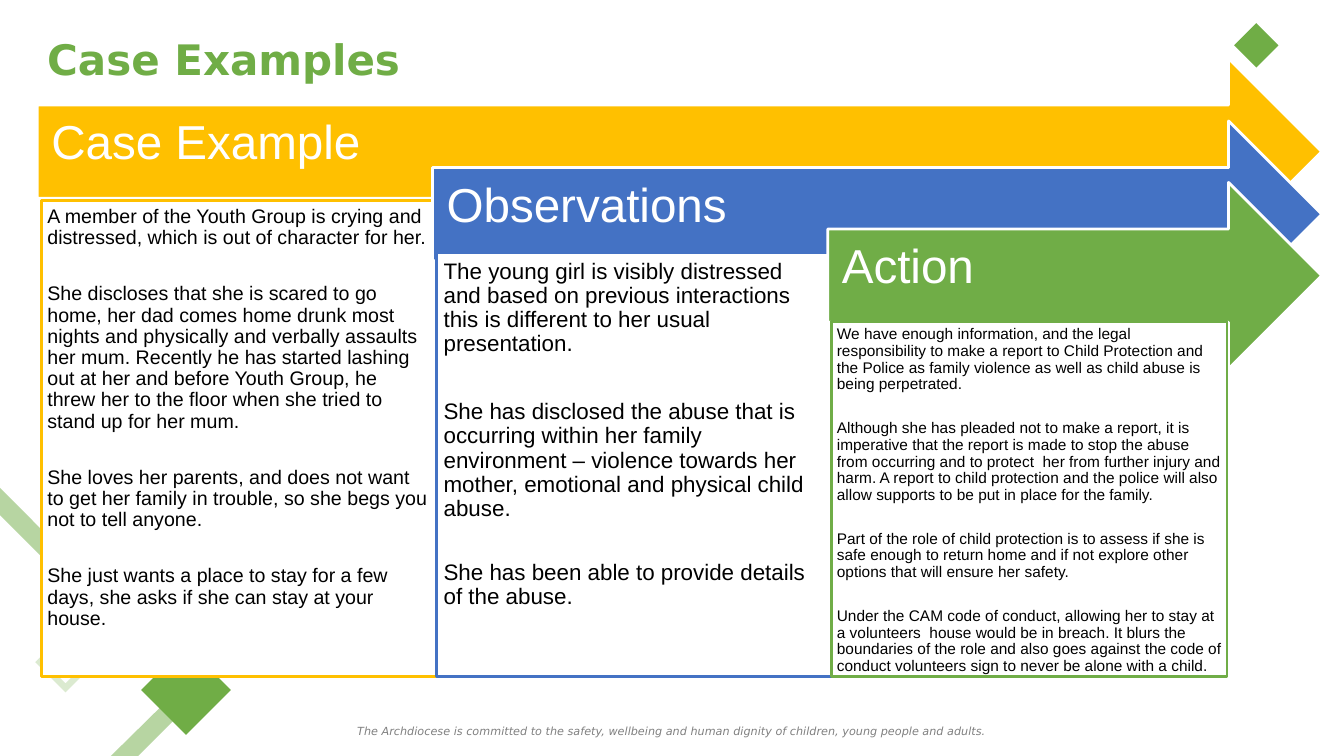
from lxml.etree import SubElement
from pptx import Presentation
from pptx.dml.color import RGBColor
from pptx.enum.shapes import MSO_SHAPE as Preset
from pptx.enum.text import MSO_ANCHOR as Anchor, PP_ALIGN as Align
from pptx.oxml.ns import qn
from pptx.util import Inches, Pt

GREEN = "70AD46"
WHITE = "FFFFFF"


def paint(shape, fill, line=None, opacity=100):
    """Set fill, outline and opacity (percent), and remove the shadow."""
    shape.shadow.inherit = False
    shape.fill.solid()
    shape.fill.fore_color.rgb = RGBColor.from_string(fill)
    if line:
        shape.line.color.rgb = RGBColor.from_string(line)
        shape.line.width = Pt(2)
    else:
        shape.line.fill.background()
    if opacity < 100:
        color = shape.fill._xPr.find(qn("a:solidFill"))[0]
        SubElement(color, qn("a:alpha")).set("val", str(opacity * 1000))


def write(box, texts, size, color, font="Arial", insets=(0.1, 0.05, 0.1, 0.05),
          anchor=Anchor.TOP, align=Align.LEFT, spacing=None, gaps=()):
    """Fill a box with paragraphs; gaps are the points after each one."""
    frame = box.text_frame
    frame.word_wrap = True
    frame.vertical_anchor = anchor
    (frame.margin_left, frame.margin_top,
     frame.margin_right, frame.margin_bottom) = map(Inches, insets)
    for index, text in enumerate(texts):
        para = frame.paragraphs[0] if index == 0 else frame.add_paragraph()
        para.alignment = align
        para.line_spacing = spacing
        if index < len(gaps):
            para.space_after = Pt(gaps[index])
        span = para.add_run()
        span.text = text
        span.font.name = font
        span.font.size = Pt(size)
        span.font.color.rgb = RGBColor.from_string(color)
    return span


deck = Presentation()
deck.slide_width, deck.slide_height = Inches(13.33), Inches(7.5)
page = deck.slides.add_slide(deck.slide_layouts[6])
shapes = page.shapes

# Footer
footer = shapes.add_textbox(Inches(0), Inches(7.14), Inches(13.33), Inches(0.24))
span = write(footer, ["The Archdiocese is committed to the safety, wellbeing and human "
                      "dignity of children, young people and adults."],
             8, "808080", "DejaVu Sans", align=Align.CENTER)
span.font.italic = True

# Background diamonds and band
cx, cy = 0.65, 6.57
rings = [[(cx, cy - r), (cx + r, cy), (cx, cy + r), (cx - r, cy)] for r in (0.3, 0.21)]
builder = shapes.build_freeform(Inches(cx), Inches(cy - 0.3), scale=1.0)
for ring in rings:
    points = [(Inches(x), Inches(y)) for x, y in ring]
    if ring is not rings[0]:
        builder.move_to(*points[0])
    builder.add_line_segments(points[1:], close=True)
paint(builder.convert_to_shape(), GREEN, opacity=25)

for left, top, side in [(1.4, 6.4, 0.89), (12.24, 0.23, 0.44)]:
    diamond = shapes.add_shape(Preset.DIAMOND, Inches(left), Inches(top),
                               Inches(side), Inches(side))
    paint(diamond, GREEN)

band = [(0, 5.11), (1.75, 6.86), (1.1, 7.5), (1.37, 7.5), (2.01, 6.86)]
builder = shapes.build_freeform(Inches(0), Inches(4.84), scale=1.0)
builder.add_line_segments([(Inches(x), Inches(y)) for x, y in band], close=True)
paint(builder.convert_to_shape(), GREEN, opacity=50)

# Title
title = shapes.add_textbox(Inches(0.37), Inches(0.07), Inches(12), Inches(1.02))
span = write(title, ["Case Examples"], 30, GREEN, "DejaVu Sans", anchor=Anchor.MIDDLE)
span.font.bold = True

# Stages: heading, colour, arrow top, panel top, text size, inset, gaps, texts
stages = [
    ("Case Example", "FFC000", 0.58, 1.99, 14, 0.06, (25, 25, 25), [
        "A member of the Youth Group is crying and distressed, which is out of "
        "character for her.",
        "She discloses that she is scared to go home, her dad comes home drunk most "
        "nights and physically and verbally assaults her mum. Recently he has started "
        "lashing out at her and before Youth Group, he threw her to the floor when she "
        "tried to stand up for her mum.",
        "She loves her parents, and does not want to get her family in trouble, so she "
        "begs you not to tell anyone.",
        "She just wants a place to stay for a few days, she asks if she can stay at "
        "your house."]),
    ("Observations", "4472C4", 1.2, 2.51, 16, 0.07, (31.3, 28.5), [
        "The young girl is visibly distressed and based on previous interactions this "
        "is different to her usual presentation.",
        "She has disclosed the abuse that is occurring within her family environment – "
        "violence towards her mother, emotional and physical child abuse.",
        "She has been able to provide details of the abuse."]),
    ("Action", "70AD47", 1.81, 3.19, 11, 0.05, (19.6, 19.6, 19.6), [
        "We have enough information, and the legal responsibility to make a report to "
        "Child Protection and the Police as family violence as well as child abuse is "
        "being perpetrated.",
        "Although she has pleaded not to make a report, it is imperative that the "
        "report is made to stop the abuse from occurring and to protect  her from "
        "further injury and harm. A report to child protection and the police will also "
        "allow supports to be put in place for the family.",
        "Part of the role of child protection is to assess if she is safe enough to "
        "return home and if not explore other options that will ensure her safety.",
        "Under the CAM code of conduct, allowing her to stay at a volunteers  house "
        "would be in breach. It blurs the boundaries of the role and also goes against "
        "the code of conduct volunteers sign to never be alone with a child."]),
]
PANEL_WIDTH, PANEL_BOTTOM, ARROW_TIP = 3.92, 6.71, 13.11

for column, (heading, color, arrow_top, panel_top, size, inset, gaps, texts) in enumerate(stages):
    left = 0.37 + column * PANEL_WIDTH
    arrow = shapes.add_shape(Preset.RIGHT_ARROW, Inches(left), Inches(arrow_top),
                             Inches(ARROW_TIP - left), Inches(1.85))
    paint(arrow, color, WHITE)
    write(arrow, [heading], 34, WHITE, insets=(0.14, 0.14, 0.28, 0.29),
          anchor=Anchor.MIDDLE, spacing=0.9)
    panel = shapes.add_shape(Preset.RECTANGLE, Inches(left + 0.04), Inches(panel_top),
                             Inches(PANEL_WIDTH), Inches(PANEL_BOTTOM - panel_top))
    paint(panel, WHITE, color)
    write(panel, texts, size, "000000", insets=(inset,) * 4, spacing=0.9, gaps=gaps)

deck.save("out.pptx")
